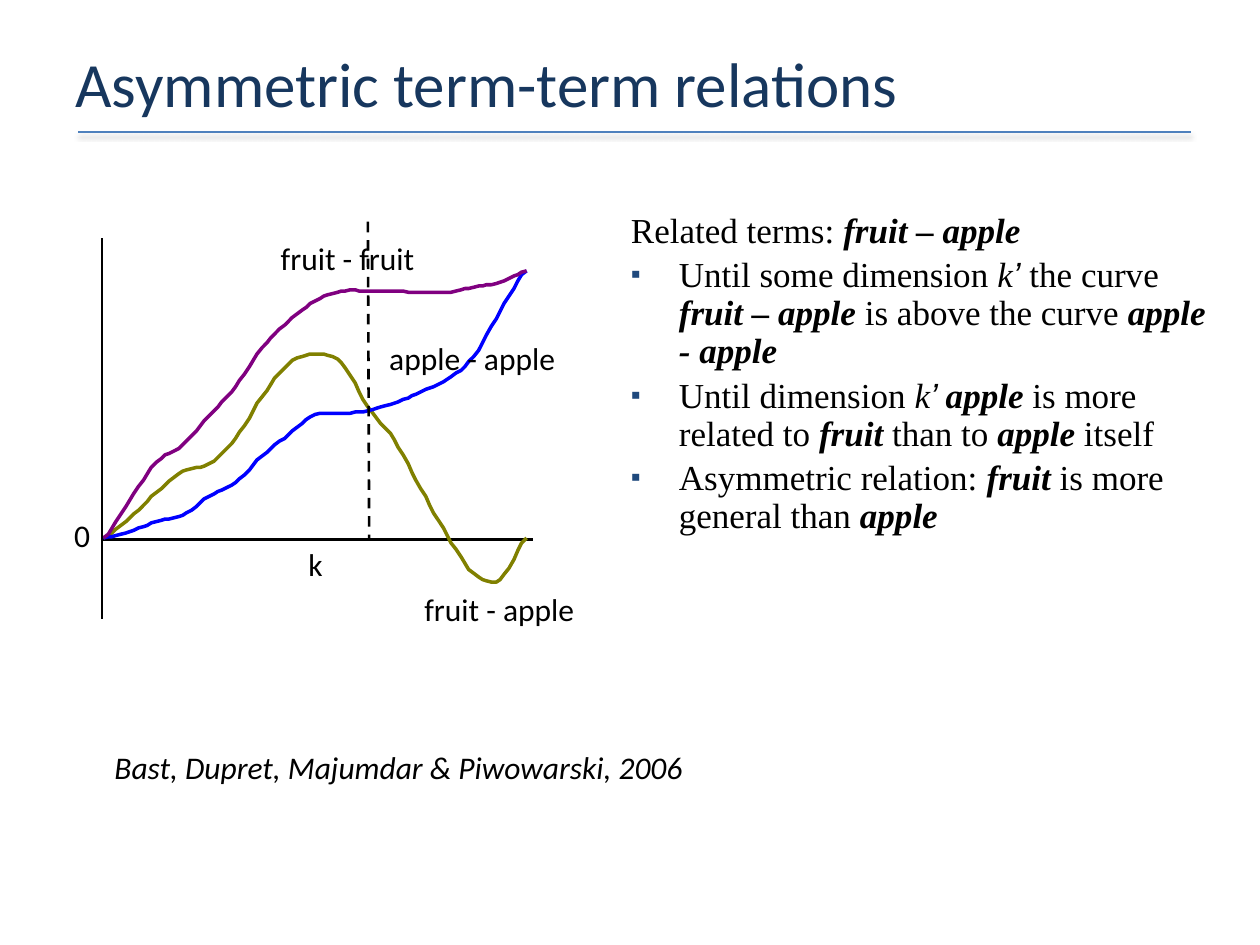
from lxml.etree import SubElement
from pptx import Presentation
from pptx.dml.color import RGBColor
from pptx.enum.dml import MSO_LINE
from pptx.enum.shapes import MSO_CONNECTOR
from pptx.enum.text import MSO_ANCHOR
from pptx.oxml.ns import qn
from pptx.util import Inches, Pt

BLACK = RGBColor(0x00, 0x00, 0x00)
NAVY = RGBColor(0x17, 0x37, 0x5E)
INDIGO = RGBColor(0x1F, 0x49, 0x7D)
STEEL = RGBColor(0x4F, 0x81, 0xBD)
OLIVE = RGBColor(0x80, 0x80, 0x00)
BLUE = RGBColor(0x00, 0x00, 0xFF)
PURPLE = RGBColor(0x80, 0x00, 0x80)

deck = Presentation()
deck.slide_width = Inches(10)
deck.slide_height = Inches(7.5)
page = deck.slides.add_slide(deck.slide_layouts[6])
column = deck.slide_width // 1000
row = deck.slide_height // 750


def write(para, text, size=18, font="Calibri", color=BLACK, bold=False, italic=False):
    span = para.add_run()
    span.text = text
    span.font.size = Pt(size)
    span.font.name = font
    span.font.color.rgb = color
    span.font.bold = bold
    span.font.italic = italic


def draw_line(left, top, right, bottom, color=BLACK, width=1.5):
    line = page.shapes.add_connector(
        MSO_CONNECTOR.STRAIGHT, left * column, top * row, right * column, bottom * row)
    line.line.color.rgb = color
    line.line.width = Pt(width)
    SubElement(line._element.spPr, qn("a:effectLst"))
    return line


title_rule = draw_line(62, 105, 945, 105, STEEL, 1)
effects = title_rule._element.spPr.find(qn("a:effectLst"))
shadow = SubElement(effects, qn("a:outerShdw"), blurRad=str(Pt(3.1)), dist=str(Pt(1.6)),
                    dir="5400000", rotWithShape="0")
shadow_color = SubElement(shadow, qn("a:srgbClr"), val=str(BLACK))
SubElement(shadow_color, qn("a:alpha"), val="38000")

title = page.shapes.add_textbox(50 * column, 30 * row, 900 * column, 71 * row)
title.text_frame.word_wrap = True
title.text_frame.vertical_anchor = MSO_ANCHOR.MIDDLE
write(title.text_frame.paragraphs[0], "Asymmetric term-term relations", size=36, color=NAVY)

PLAIN = {"size": 20, "font": "Times New Roman"}
ITALIC = {**PLAIN, "italic": True}
TERM = {**ITALIC, "bold": True}
PRIME = {**ITALIC, "font": "Arial"}
body_paragraphs = [
    [("Related terms: ", PLAIN), ("fruit – apple", TERM)],
    [("Until some dimension ", PLAIN), ("k", ITALIC), ("’", PRIME), (" the curve ", PLAIN),
     ("fruit – apple", TERM), (" is above the curve ", PLAIN), ("apple - apple", TERM)],
    [("Until dimension ", PLAIN), ("k", ITALIC), ("’ ", PRIME), ("apple", TERM),
     (" is more related to ", PLAIN), ("fruit", TERM), (" than to ", PLAIN),
     ("apple ", TERM), ("itself", PLAIN)],
    [("Asymmetric relation: ", PLAIN), ("fruit ", TERM),
     ("is more general than ", PLAIN), ("apple", TERM)],
]
body_indent = 38 * column
body = page.shapes.add_textbox(491 * column, 164 * row, 476 * column, 327 * row)
body.text_frame.word_wrap = True
for index, pieces in enumerate(body_paragraphs):
    para = body.text_frame.paragraphs[0] if index == 0 else body.text_frame.add_paragraph()
    para.line_spacing = 0.9
    para.space_before = Pt(4)
    properties = para._p.get_or_add_pPr()
    properties.set("marL", str(body_indent))
    properties.set("indent", str(-body_indent))
    if index > 0:
        bullet_color = SubElement(properties, qn("a:buClr"))
        SubElement(bullet_color, qn("a:srgbClr"), val=str(INDIGO))
        SubElement(properties, qn("a:buSzPct"), val="80000")
        SubElement(properties, qn("a:buFont"), typeface="Arial")
        SubElement(properties, qn("a:buChar"), char="▪")
    for text, style in pieces:
        write(para, text, **style)

axis_left, axis_right, axis_top, axis_bottom = 81, 423, 189, 491
zero_level = 428
knot_gap = 21
samples_per_gap = 6
curves = [
    (OLIVE, [0, 16, 36, 53, 59, 79, 112, 138, 146, 139, 104, 78, 39, 2, -28, -33, 0]),
    (BLUE, [0, 5, 13, 18, 33, 44, 65, 82, 98, 99, 101, 107, 116, 126, 144, 180, 212]),
    (PURPLE, [0, 30, 60, 74, 97, 120, 151, 172, 188, 196, 196, 196, 195, 195, 199, 203, 212]),
]

draw_line(axis_left, zero_level, axis_right, zero_level)

for color, heights in curves:
    padded = [heights[0], *heights, heights[-1]]
    points = []
    for gap in range(len(heights) - 1):
        before, start, end, after = padded[gap:gap + 4]
        start_slope = (end - before) / 2
        end_slope = (after - start) / 2
        for sample in range(samples_per_gap):
            share = sample / samples_per_gap
            height = (start + start_slope * share
                      + (3 * (end - start) - 2 * start_slope - end_slope) * share ** 2
                      + (2 * (start - end) + start_slope + end_slope) * share ** 3)
            points.append((axis_left + 1 + (gap + share) * knot_gap, zero_level - 1 - height))
    points.append((axis_left + 1 + (len(heights) - 1) * knot_gap, zero_level - 1 - heights[-1]))
    builder = page.shapes.build_freeform(*points[0], scale=column)
    builder.add_line_segments(points[1:], close=False)
    curve = builder.convert_to_shape()
    curve.shadow.inherit = False
    curve.fill.background()
    curve.line.color.rgb = color
    curve.line.width = Pt(2)

draw_line(axis_left, axis_top, axis_left, axis_bottom)

labels = [
    ("0", 49, 405, 40, False),
    ("k", 235, 428, 40, False),
    ("fruit - apple", 327, 463, 153, False),
    ("fruit - fruit", 213, 185, 153, False),
    ("apple - apple", 299, 264, 165, False),
    ("Bast, Dupret, Majumdar & Piwowarski, 2006", 81, 589, 709, True),
]
for text, left, top, width, italic in labels:
    box = page.shapes.add_textbox(left * column, top * row, width * column, 40 * row)
    box.text_frame.word_wrap = True
    write(box.text_frame.paragraphs[0], text, italic=italic)

dimension_marker = draw_line(292, 176, 293, zero_level - 1)
dimension_marker.line.dash_style = MSO_LINE.DASH

deck.save("out.pptx")
